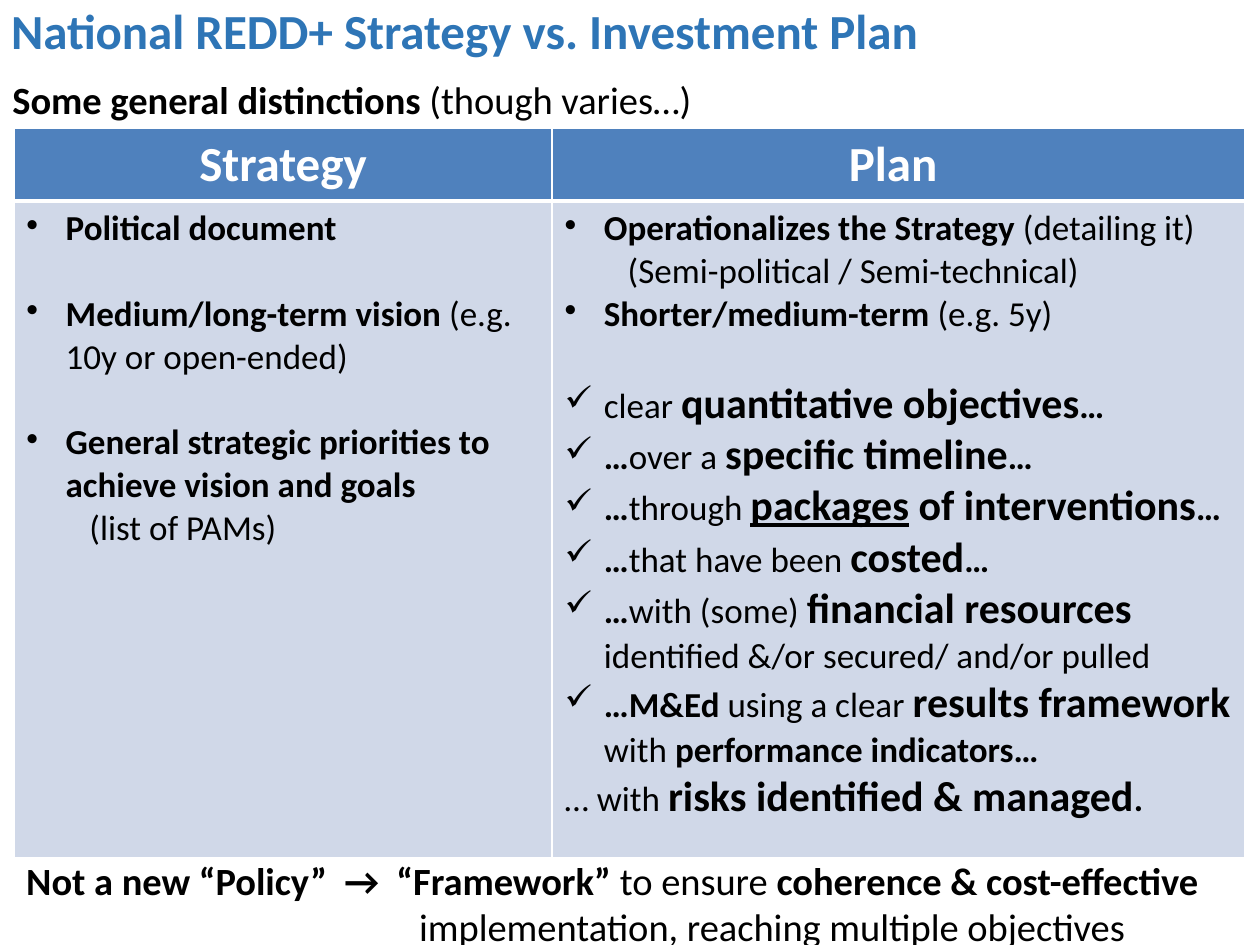
from lxml.etree import SubElement
from pptx import Presentation
from pptx.dml.color import RGBColor
from pptx.enum.text import MSO_ANCHOR, MSO_AUTO_SIZE, PP_ALIGN
from pptx.oxml.ns import qn
from pptx.util import Cm, Pt

# Content: a run is (text, style); n plain, b bold, B big bold, U big underlined
TITLE = "National REDD+ Strategy vs. Investment Plan"
INTRO = [("Some general distinctions ", "b"), ("(though varies…)", "n")]
NOTE = [("Not a new “Policy”  →  “Framework” ", "b"), ("to ensure ", "n"),
        ("coherence & cost-effective ", "b"),
        ("implementation, reaching multiple objectives", "n")]
HEADS = ["Strategy", "Plan "]

# A table paragraph is (mark, lines of space before, runs); "-" is a sub-line
LEFT = [
    ("•", 0, [("Political document", "b")]),
    ("•", 1, [("Medium/long-term vision ", "b"), ("(e.g. 10y or open-ended)", "n")]),
    ("•", 1, [("General strategic priorities to achieve vision and goals", "b")]),
    ("-", 0, [("(list of PAMs)", "n")]),
]
RIGHT = [
    ("•", 0, [("Operationalizes the Strategy ", "b"), ("(detailing it)", "n")]),
    ("-", 0, [("(Semi-political / Semi-technical)", "n")]),
    ("•", 0, [("Shorter/medium-term ", "b"), ("(e.g. 5y)", "n")]),
    ("✓", 1, [("clear ", "n"), ("quantitative objectives", "B"), ("…", "b")]),
    ("✓", 0, [("…", "b"), ("over a ", "n"), ("specific timeline", "B"), ("…", "b")]),
    ("✓", 0, [("…", "b"), ("through ", "n"), ("packages", "U"),
              (" of interventions", "B"), ("…", "b")]),
    ("✓", 0, [("…", "b"), ("that have been ", "n"), ("costed", "B"), ("…", "b")]),
    ("✓", 0, [("…", "b"), ("with (some) ", "n"), ("financial resources ", "B"),
              ("identified &/or secured/ and/or pulled", "n")]),
    ("✓", 0, [("…M&Ed ", "b"), ("using a clear ", "n"), ("results framework ", "B"),
              ("with", "n"), (" performance indicators…", "b")]),
    ("", 0, [("… with ", "n"), ("risks identified & managed", "B"), (".", "b")]),
]

# Look
FONT, BLACK, WHITE = "Calibri", "000000", "FFFFFF"
BLUE, HEAD, BODY = "2E75B6", "4F81BD", "D0D8E8"
LINE = 24.4  # height of one 20 pt line, in points
COLS, ROWS = [10.85, 13.97], [1.42, 13.23]


def color(code):
    return RGBColor.from_string(code)


def style(para, size, code):
    font = para.font
    font.name, font.size = FONT, Pt(size)
    font.color.rgb = color(code)


def fill_runs(para, runs, size):
    style(para, size, BLACK)
    for text, kind in runs:
        run = para.add_run()
        run.text = text
        run.font.bold = kind != "n"
        if kind in "BU":
            run.font.size = Pt(24)
        if kind == "U":
            run.font.underline = True


def indent(para, left, first, mark=""):
    props = para._p.get_or_add_pPr()
    props.set("marL", str(Cm(left)))
    props.set("indent", str(Cm(first)))
    if mark:
        SubElement(props, qn("a:buChar"), char=mark)


def add_text(slide, box, runs):
    shape = slide.shapes.add_textbox(*map(Cm, box))
    frame = shape.text_frame
    frame.word_wrap = True
    para = frame.paragraphs[0]
    fill_runs(para, runs, 22)
    return para


def paint(cell, code, low):
    """Give a cell white borders, with its own lower width, and a fill."""
    props = cell._tc.get_or_add_tcPr()
    for side, width in zip("LRTB", (1, 1, 1, low)):
        edge = SubElement(props, qn("a:ln" + side), w=str(Pt(width)))
        solid = SubElement(edge, qn("a:solidFill"))
        SubElement(solid, qn("a:srgbClr"), val=WHITE)
    cell.fill.solid()
    cell.fill.fore_color.rgb = color(code)


def add_items(frame, items):
    for i, (mark, gap, runs) in enumerate(items):
        para = frame.add_paragraph() if i else frame.paragraphs[0]
        para.space_before = Pt(gap * LINE)
        if mark == "-":
            para.level = 1
            indent(para, 1.27, 0)
        elif mark:
            indent(para, 0.79, -0.79, mark)
        fill_runs(para, runs, 20)


def main():
    deck = Presentation()
    deck.slide_width, deck.slide_height = Cm(25.4), Cm(19.05)
    slide = deck.slides.add_slide(deck.slide_layouts[5])

    # Title
    title = slide.shapes.title
    title.left, title.top, title.width, title.height = map(Cm, (-0.03, -0.05, 25.43, 1.45))
    frame = title.text_frame
    frame.text = TITLE
    frame.auto_size = MSO_AUTO_SIZE.NONE
    frame.vertical_anchor = MSO_ANCHOR.MIDDLE
    para = frame.paragraphs[0]
    para.alignment = PP_ALIGN.LEFT
    para.line_spacing, para.space_before = 0.9, Pt(7)
    style(para, 28, BLUE)
    para.font.bold = True

    # Comparison table
    table = slide.shapes.add_table(2, 2, Cm(0.28), Cm(2.59),
                                   Cm(sum(COLS)), Cm(sum(ROWS))).table
    table.horz_banding = False
    for row, high in zip(table.rows, ROWS):
        row.height = Cm(high)
    for i, (wide, head, items) in enumerate(zip(COLS, HEADS, (LEFT, RIGHT))):
        table.columns[i].width = Cm(wide)
        top, body = table.cell(0, i), table.cell(1, i)
        paint(top, HEAD, 3)
        paint(body, BODY, 1)
        top.text = head
        para = top.text_frame.paragraphs[0]
        para.alignment = PP_ALIGN.CENTER
        style(para, 28, WHITE)
        para.font.bold = True
        add_items(body.text_frame, items)

    # Lines above and below the table
    add_text(slide, (0, 1.4, 14.61, 1.19), INTRO)
    indent(add_text(slide, (0.28, 17.15, 25.12, 2.13), NOTE), 7.92, -7.92)

    deck.save("out.pptx")


if __name__ == "__main__":
    main()
